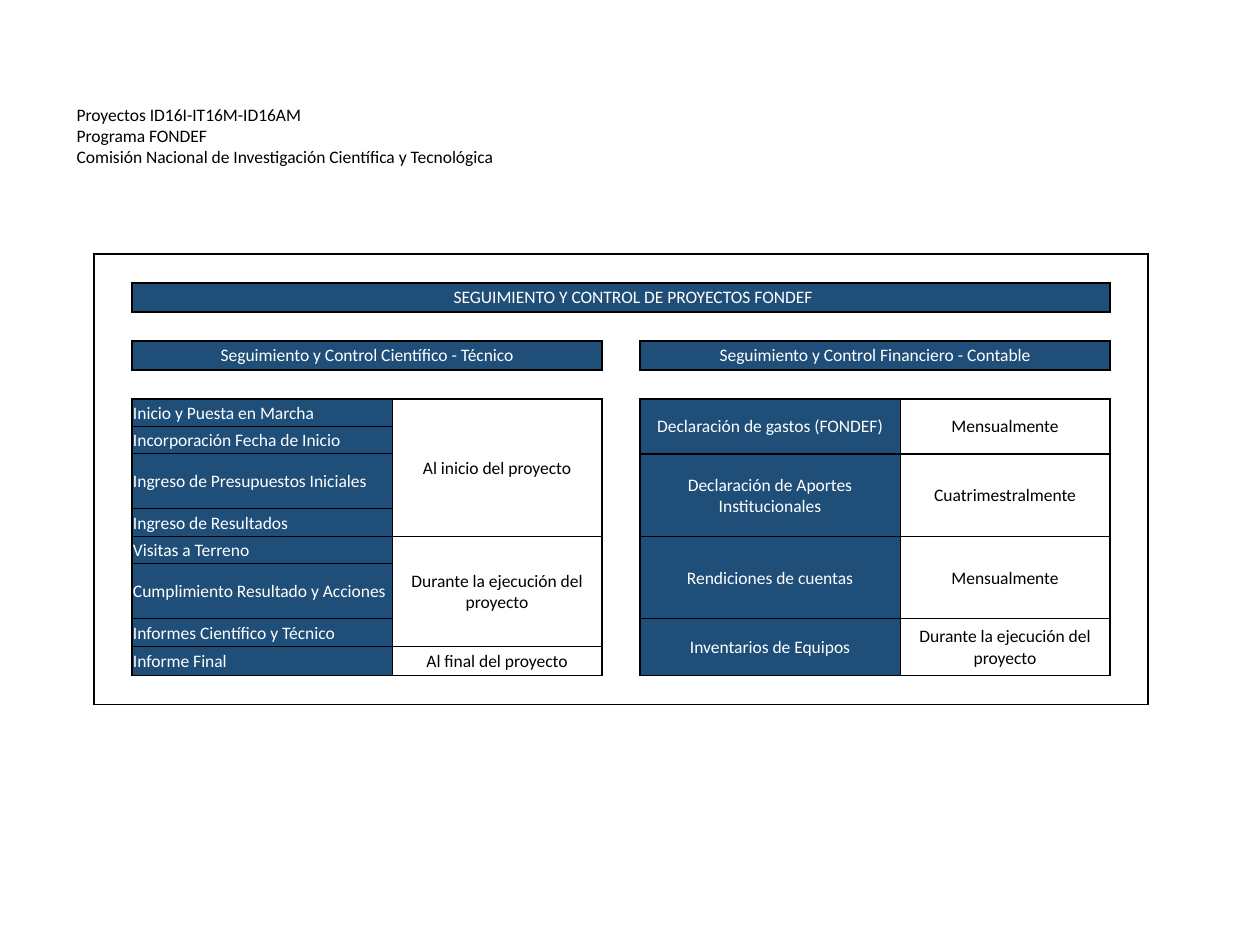
import itertools
import pptx
import pptx.dml.color
import pptx.enum.text
import pptx.oxml.ns
import pptx.util
from lxml import etree

ALIGN = pptx.enum.text.PP_ALIGN
MIDDLE = pptx.enum.text.MSO_ANCHOR.MIDDLE
PX = 914400 // 126
COLORS = {"ink": "000000", "paper": "FFFFFF", "navy": "1F4E78"}
FONT = {"name": "Calibri", "size": pptx.util.Pt(10)}

HEADING = [
    "Proyectos ID16I-IT16M-ID16AM",
    "Programa FONDEF",
    "Comisión Nacional de Investigación Científica y Tecnológica",
]
BANNER = "SEGUIMIENTO Y CONTROL DE PROYECTOS FONDEF"
PANELS = [
    {
        "first_col": 1,
        "header": "Seguimiento y Control Científico - Técnico",
        "align": ALIGN.LEFT,
        "tasks": [
            ("Inicio y Puesta en Marcha", 1),
            ("Incorporación Fecha de Inicio", 1),
            ("Ingreso de Presupuestos Iniciales", 1),
            ("Ingreso de Resultados", 1),
            ("Visitas a Terreno", 1),
            ("Cumplimiento Resultado y Acciones", 1),
            ("Informes Científico y Técnico", 1),
            ("Informe Final", 1),
        ],
        "periods": [
            ("Al inicio del proyecto", 4),
            ("Durante la ejecución del proyecto", 3),
            ("Al final del proyecto", 1),
        ],
    },
    {
        "first_col": 4,
        "header": "Seguimiento y Control Financiero - Contable",
        "align": ALIGN.CENTER,
        "tasks": [
            ("Declaración de gastos (FONDEF)", 2),
            ("Declaración de Aportes Institucionales", 2),
            ("Rendiciones de cuentas", 2),
            ("Inventarios de Equipos", 2),
        ],
        "periods": [
            ("Mensualmente", 2),
            ("Cuatrimestralmente", 2),
            ("Mensualmente", 2),
            ("Durante la ejecución del proyecto", 2),
        ],
    },
]
COL_WIDTHS = [38, 260, 210, 38, 260, 210, 38]
ROW_HEIGHTS = [29] * 5 + [28, 27, 55, 28, 27, 55, 28, 29, 29]
FIRST_TASK_ROW = 5
THICK_COLS = {0, 1, 3, 4, 6, 7}
THICK_ROWS = {0, 1, 2, 3, 4, 5, 13, 14}
NO_STYLE = "{2D5ABB26-0587-4C30-8999-92F81FD0307C}"


def rgb(key):
    return pptx.dml.color.RGBColor.from_string(COLORS[key])


def set_font(font, color):
    for attribute, value in FONT.items():
        setattr(font, attribute, value)
    font.color.rgb = rgb(color)


def add_border(cell, side, thick):
    line = etree.SubElement(
        cell._tc.get_or_add_tcPr(),
        pptx.oxml.ns.qn("a:ln" + side),
        w=str(pptx.util.Pt(1 if thick else 0.5)),
    )
    fill = etree.SubElement(line, pptx.oxml.ns.qn("a:solidFill"))
    etree.SubElement(fill, pptx.oxml.ns.qn("a:srgbClr"), val=COLORS["ink"])


def outline(table, row, col, rows, cols):
    bottom, right = row + rows, col + cols
    for r, c in itertools.product(range(row, bottom), range(col, right)):
        edges = [
            ("L", c == col, col in THICK_COLS),
            ("R", c + 1 == right, right in THICK_COLS),
            ("T", r == row, row in THICK_ROWS),
            ("B", r + 1 == bottom, bottom in THICK_ROWS),
        ]
        for side, on_edge, thick in edges:
            if on_edge:
                add_border(table.cell(r, c), side, thick)


def add_block(table, row, col, rows, cols, text, filled=True, align=ALIGN.CENTER, indent=1):
    outline(table, row, col, rows, cols)
    cell = table.cell(row, col)
    if rows * cols > 1:
        cell.merge(table.cell(row + rows - 1, col + cols - 1))
    cell.margin_left = indent * PX
    if filled:
        cell.fill.solid()
        cell.fill.fore_color.rgb = rgb("navy")
    paragraph = cell.text_frame.paragraphs[0]
    paragraph.alignment = align
    run = paragraph.add_run()
    run.text = text
    set_font(run.font, "paper" if filled else "ink")


def add_column(table, col, entries, filled, align):
    row = FIRST_TASK_ROW
    for text, rows in entries:
        add_block(table, row, col, rows, 1, text, filled, align)
        row += rows


def add_heading(slide):
    title = slide.shapes.title
    place = {"left": 64, "top": 66, "width": 984, "height": 140}
    for attribute, value in place.items():
        setattr(title, attribute, value * PX)
    title.text_frame.text = "\v".join(HEADING)
    title.text_frame.vertical_anchor = MIDDLE
    paragraph = title.text_frame.paragraphs[0]
    paragraph.alignment = ALIGN.LEFT
    for run in paragraph.runs:
        set_font(run.font, "ink")


def add_plan(slide):
    rows, cols = len(ROW_HEIGHTS), len(COL_WIDTHS)
    table = slide.shapes.add_table(
        rows, cols, 94 * PX, 254 * PX, sum(COL_WIDTHS) * PX, sum(ROW_HEIGHTS) * PX
    ).table
    table.first_row = table.horz_banding = False
    table._tbl.tblPr.find(pptx.oxml.ns.qn("a:tableStyleId")).text = NO_STYLE
    for column, width in zip(table.columns, COL_WIDTHS):
        column.width = width * PX
    for line, height in zip(table.rows, ROW_HEIGHTS):
        line.height = height * PX

    cell_format = {
        "margin_left": PX,
        "margin_right": PX,
        "margin_top": PX,
        "margin_bottom": 0,
        "vertical_anchor": MIDDLE,
    }
    outline(table, 0, 0, rows, cols)
    for cell in table.iter_cells():
        for attribute, value in cell_format.items():
            setattr(cell, attribute, value)
        end = cell.text_frame.paragraphs[0]._p.get_or_add_endParaRPr()
        end.set("sz", str(int(FONT["size"].pt * 100)))

    add_block(table, 1, 1, 1, 5, BANNER, indent=25)
    for panel in PANELS:
        col = panel["first_col"]
        add_block(table, 3, col, 1, 2, panel["header"])
        add_column(table, col, panel["tasks"], True, panel["align"])
        add_column(table, col + 1, panel["periods"], False, ALIGN.CENTER)

    for cell in table.iter_cells():
        if cell.fill.type is None:
            cell.fill.background()


def main():
    deck = pptx.Presentation()
    deck.slide_width = pptx.util.Inches(10)
    deck.slide_height = pptx.util.Inches(7.5)
    slide = deck.slides.add_slide(deck.slide_layouts[5])
    add_heading(slide)
    add_plan(slide)
    deck.save("out.pptx")


if __name__ == "__main__":
    main()
